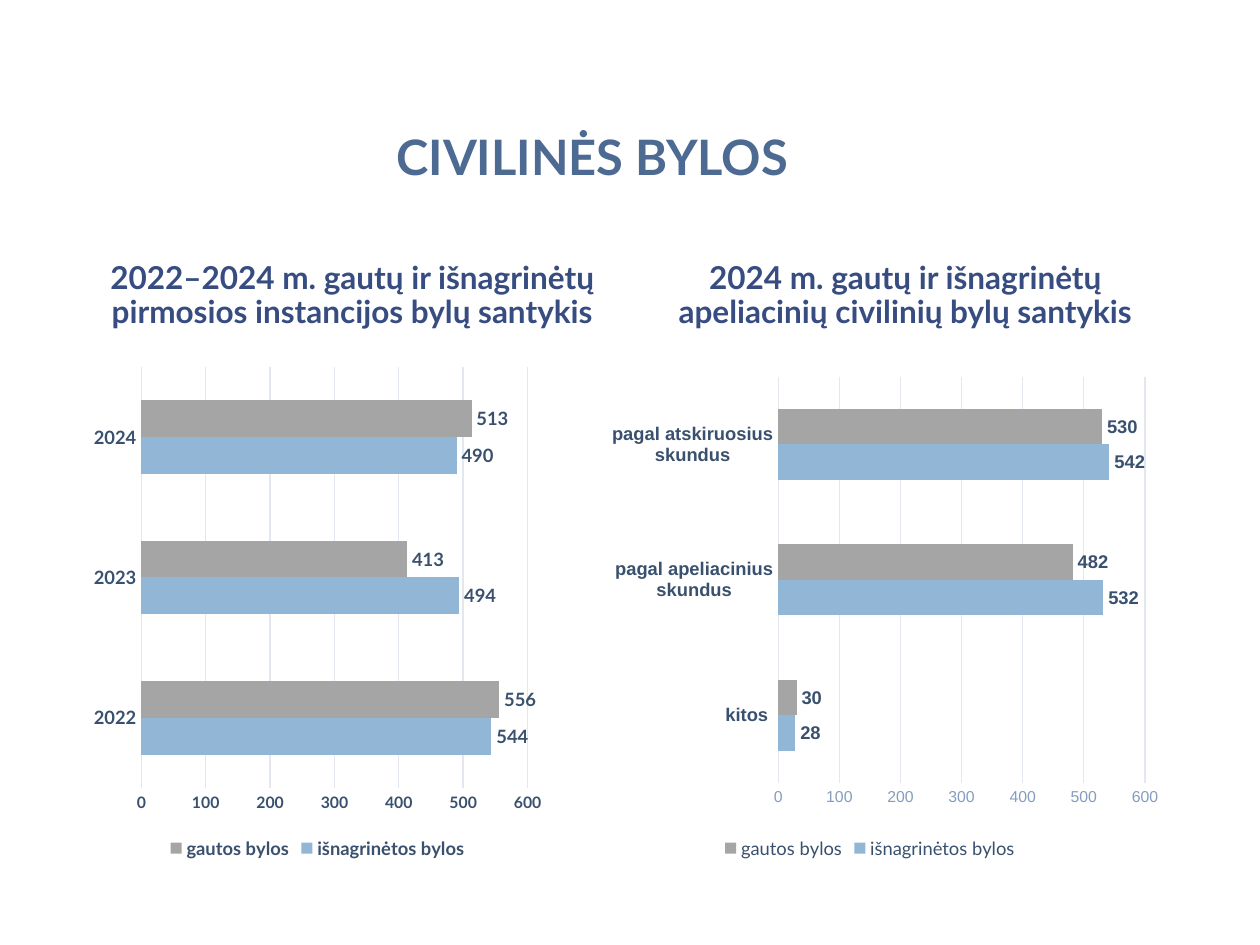
from lxml import etree
from pptx import Presentation
from pptx.chart.data import CategoryChartData
from pptx.dml.color import RGBColor
from pptx.enum.chart import XL_CHART_TYPE as ChartType
from pptx.enum.chart import XL_LABEL_POSITION as LabelPosition
from pptx.enum.chart import XL_LEGEND_POSITION as LegendPosition
from pptx.enum.chart import XL_TICK_MARK as TickMark
from pptx.enum.text import MSO_ANCHOR as Anchor
from pptx.enum.text import PP_ALIGN as Align
from pptx.oxml.ns import qn
from pptx.util import Inches, Pt

TITLE = RGBColor(0x4C, 0x6A, 0x92)
HEADING = RGBColor(0x37, 0x4C, 0x80)
DARK = RGBColor(0x39, 0x50, 0x6E)
LIGHT = RGBColor(0x84, 0x9D, 0xBF)
GRID = RGBColor(0xE3, 0xE8, 0xF0)
BLUE = RGBColor(0x92, 0xB6, 0xD5)
GREY = RGBColor(0xA5, 0xA5, 0xA5)


def set_font(font, size, color, name="Lato", bold=True):
    font.size, font.name, font.bold = Pt(size), name, bold
    font.color.rgb = color


def write_text(frame, text, size, color, anchor):
    """Fill the frame with one centred paragraph."""
    frame.word_wrap = True
    frame.vertical_anchor = anchor
    para = frame.paragraphs[0]
    para.alignment = Align.CENTER
    para.line_spacing = 0.9
    span = para.add_run()
    span.text = text
    set_font(span.font, size, color)


deck = Presentation()
deck.slide_width, deck.slide_height = Inches(10), Inches(7.5)
page = deck.slides.add_slide(deck.slide_layouts[5])

title = page.shapes.title
title.left, title.top = Inches(0.45), Inches(1.05)
title.width, title.height = Inches(8.5), Inches(0.43)
write_text(title.text_frame, "CIVILINĖS BYLOS", 27.9, TITLE, Anchor.MIDDLE)

headings = [
    (0.67, 1.57, "2022–2024 m. gautų ir išnagrinėtų pirmosios instancijos bylų santykis"),
    (5.06, 1.84, "2024 m. gautų ir išnagrinėtų apeliacinių civilinių bylų santykis"),
]
HEADING_BOTTOM = 3.02
for left, top, text in headings:
    box = page.shapes.add_textbox(
        Inches(left), Inches(top), Inches(4.25), Inches(HEADING_BOTTOM - top))
    write_text(box.text_frame, text, 18, HEADING, Anchor.BOTTOM)
    box.text_frame.margin_bottom = Inches(0.4)

charts = [
    dict(left=0.67, width=3.7, font="Lato", scale_color=DARK, bold=True, plot_area=None,
         categories=["2022", "2023", "2024"],
         completed=[544, 494, 490], received=[556, 413, 513]),
    dict(left=4.48, width=4.85, font="Arial", scale_color=LIGHT, bold=False,
         plot_area=dict(x=0.35, y=0.04, w=0.6, h=0.8),
         categories=["kitos ", "pagal apeliacinius skundus", "pagal atskiruosius skundus"],
         completed=[28, 532, 542], received=[30, 482, 530]),
]
for item in charts:
    data = CategoryChartData()
    data.categories = item["categories"]
    data.add_series("išnagrinėtos bylos", item["completed"])
    data.add_series("gautos bylos", item["received"])
    chart = page.shapes.add_chart(
        ChartType.BAR_CLUSTERED, Inches(item["left"]), Inches(2.83),
        Inches(item["width"]), Inches(4.03), data).chart
    set_font(chart.font, 10, DARK, item["font"], item["bold"])
    chart.has_title = False
    chart.has_legend = True
    chart.legend.position = LegendPosition.BOTTOM
    chart.legend.include_in_layout = False
    set_font(chart.legend.font, 10.5, DARK, bold=item["bold"])

    for axis in (chart.category_axis, chart.value_axis):
        axis.major_tick_mark = axis.minor_tick_mark = TickMark.NONE
    names, scale = chart.category_axis, chart.value_axis
    set_font(names.tick_labels.font, 10.5, DARK, item["font"])
    set_font(scale.tick_labels.font, 9, item["scale_color"], item["font"], item["bold"])
    scale.minimum_scale, scale.maximum_scale, scale.major_unit = 0, 600, 100
    scale.format.line.fill.background()
    for line in (names.format.line, scale.major_gridlines.format.line):
        line.color.rgb = GRID
        line.width = Pt(0.75)

    plot = chart.plots[0]
    plot.gap_width, plot.overlap = 182, 0
    plot.vary_by_categories = False
    for series, color in zip(plot.series, (BLUE, GREY)):
        series.format.fill.solid()
        series.format.fill.fore_color.rgb = color
        labels = series.data_labels
        labels.show_value = True
        labels.position = LabelPosition.OUTSIDE_END
        set_font(labels.font, 10.5, DARK, item["font"])

    if item["plot_area"]:
        area = chart.element.find(".//" + qn("c:plotArea"))
        for old in area.findall(qn("c:layout")):
            area.remove(old)
        layout = etree.Element(qn("c:layout"))
        manual = etree.SubElement(layout, qn("c:manualLayout"))
        settings = dict(layoutTarget="inner", xMode="edge", yMode="edge", **item["plot_area"])
        for tag, value in settings.items():
            etree.SubElement(manual, qn("c:" + tag)).set("val", str(value))
        area.insert(0, layout)

deck.save("out.pptx")
